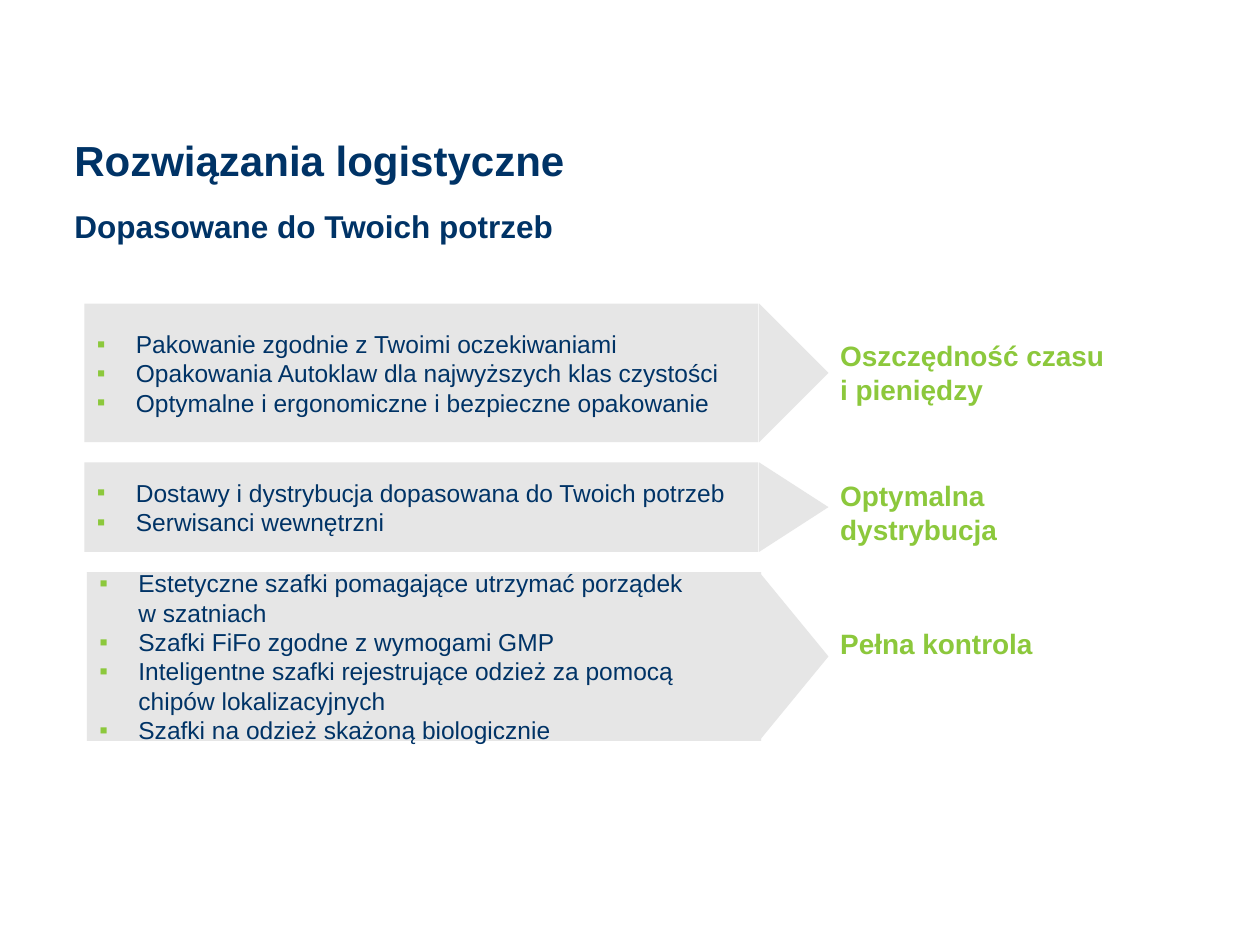
from dataclasses import dataclass

from lxml import etree
from pptx import Presentation
from pptx.dml.color import RGBColor
from pptx.enum.shapes import MSO_SHAPE
from pptx.enum.text import MSO_ANCHOR, MSO_AUTO_SIZE, PP_ALIGN
from pptx.oxml.ns import qn
from pptx.util import Inches, Pt

RECTANGLE = MSO_SHAPE.RECTANGLE
TRIANGLE = MSO_SHAPE.FLOWCHART_EXTRACT
MIDDLE = MSO_ANCHOR.MIDDLE
LEFT = PP_ALIGN.LEFT
GROW = MSO_AUTO_SIZE.SHAPE_TO_FIT_TEXT

COLORS = {"navy": "003366", "green": "8CC83C", "gray": "E6E6E6"}
FONT = "Arial"
BAND_WIDTH = 5.35
TIP_LENGTH = 0.55
TIP_CENTER = 6.3
BENEFIT_LEFT = 6.57
BULLET_INDENT = 0.31


@dataclass
class Solution:
    left: float
    top: float
    height: float
    points: list[str]
    benefit: str
    benefit_top: float
    benefit_width: float
    benefit_height: float


SOLUTIONS = [
    Solution(0.67, 2.41, 1.1,
             ["Pakowanie zgodnie z Twoimi oczekiwaniami",
              "Opakowania Autoklaw dla najwyższych klas czystości",
              "Optymalne i ergonomiczne i bezpieczne opakowanie"],
             "Oszczędność czasu\ni pieniędzy", 2.64, 2.83, 0.64),
    Solution(0.67, 3.67, 0.71,
             ["Dostawy i dystrybucja dopasowana do Twoich potrzeb",
              "Serwisanci wewnętrzni"],
             "Optymalna dystrybucja", 3.75, 2.52, 0.64),
    Solution(0.69, 4.54, 1.34,
             ["Estetyczne szafki pomagające utrzymać porządek\nw szatniach",
              "Szafki FiFo zgodne z wymogami GMP",
              "Inteligentne szafki rejestrujące odzież za pomocą chipów lokalizacyjnych",
              "Szafki na odzież skażoną biologicznie"],
             "Pełna kontrola", 4.92, 3.15, 0.37),
]


def rgb(name: str) -> RGBColor:
    return RGBColor.from_string(COLORS[name])


def write(paragraph, text: str, size: int, color: str, bold: bool = False) -> None:
    """Add one run per line, with line breaks between them."""
    paragraph.alignment = LEFT
    for index, line in enumerate(text.split("\n")):
        if index:
            paragraph.add_line_break()
        run = paragraph.add_run()
        run.text = line
        run.font.name = FONT
        run.font.size = Pt(size)
        run.font.bold = bold
        run.font.color.rgb = rgb(color)


def add_bullet(paragraph) -> None:
    properties = paragraph._p.get_or_add_pPr()
    properties.set("marL", str(Inches(BULLET_INDENT)))
    properties.set("indent", str(-Inches(BULLET_INDENT)))
    bullet_color = etree.SubElement(properties, qn("a:buClr"))
    etree.SubElement(bullet_color, qn("a:srgbClr"), val=COLORS["green"])
    etree.SubElement(properties, qn("a:buFont"), typeface=FONT)
    etree.SubElement(properties, qn("a:buChar"), char="▪")


def add_gray_shape(slide, kind, left: float, top: float, width: float, height: float):
    shape = slide.shapes.add_shape(
        kind, Inches(left), Inches(top), Inches(width), Inches(height))
    shape.shadow.inherit = False
    shape.fill.solid()
    shape.fill.fore_color.rgb = rgb("gray")
    shape.line.fill.background()
    return shape


def add_band(slide, solution: Solution) -> None:
    band = add_gray_shape(
        slide, RECTANGLE, solution.left, solution.top, BAND_WIDTH, solution.height)
    frame = band.text_frame
    frame.word_wrap = True
    frame.vertical_anchor = MIDDLE
    for index, point in enumerate(solution.points):
        paragraph = frame.add_paragraph() if index else frame.paragraphs[0]
        add_bullet(paragraph)
        write(paragraph, point, 14, "navy")


def add_tip(slide, solution: Solution) -> None:
    """Turn a triangle to the right, at the end of the band."""
    middle = solution.top + solution.height / 2
    tip = add_gray_shape(slide, TRIANGLE, TIP_CENTER - solution.height / 2,
                         middle - TIP_LENGTH / 2, solution.height, TIP_LENGTH)
    tip.rotation = 90


def add_text(slide, left: float, top: float, width: float, height: float,
             text: str, size: int, color: str):
    box = slide.shapes.add_textbox(
        Inches(left), Inches(top), Inches(width), Inches(height))
    frame = box.text_frame
    frame.word_wrap = True
    write(frame.paragraphs[0], text, size, color, bold=True)
    return frame


def add_heading(slide, top: float, height: float, text: str, size: int) -> None:
    frame = add_text(slide, 0.59, top, 8.82, height, text, size, "navy")
    frame.margin_left = frame.margin_right = 0
    frame.margin_top = frame.margin_bottom = 0


def add_benefit(slide, solution: Solution) -> None:
    frame = add_text(slide, BENEFIT_LEFT, solution.benefit_top, solution.benefit_width,
                     solution.benefit_height, solution.benefit, 16, "green")
    frame.auto_size = GROW


def main() -> None:
    presentation = Presentation()
    presentation.slide_width = Inches(10)
    presentation.slide_height = Inches(7.5)
    slide = presentation.slides.add_slide(presentation.slide_layouts[6])
    for add_part in (add_band, add_tip, add_benefit):
        for solution in SOLUTIONS:
            add_part(slide, solution)
    add_heading(slide, 1.07, 0.47, "Rozwiązania logistyczne", 24)
    add_heading(slide, 1.64, 0.35, "Dopasowane do Twoich potrzeb", 18)
    presentation.save("out.pptx")


if __name__ == "__main__":
    main()
